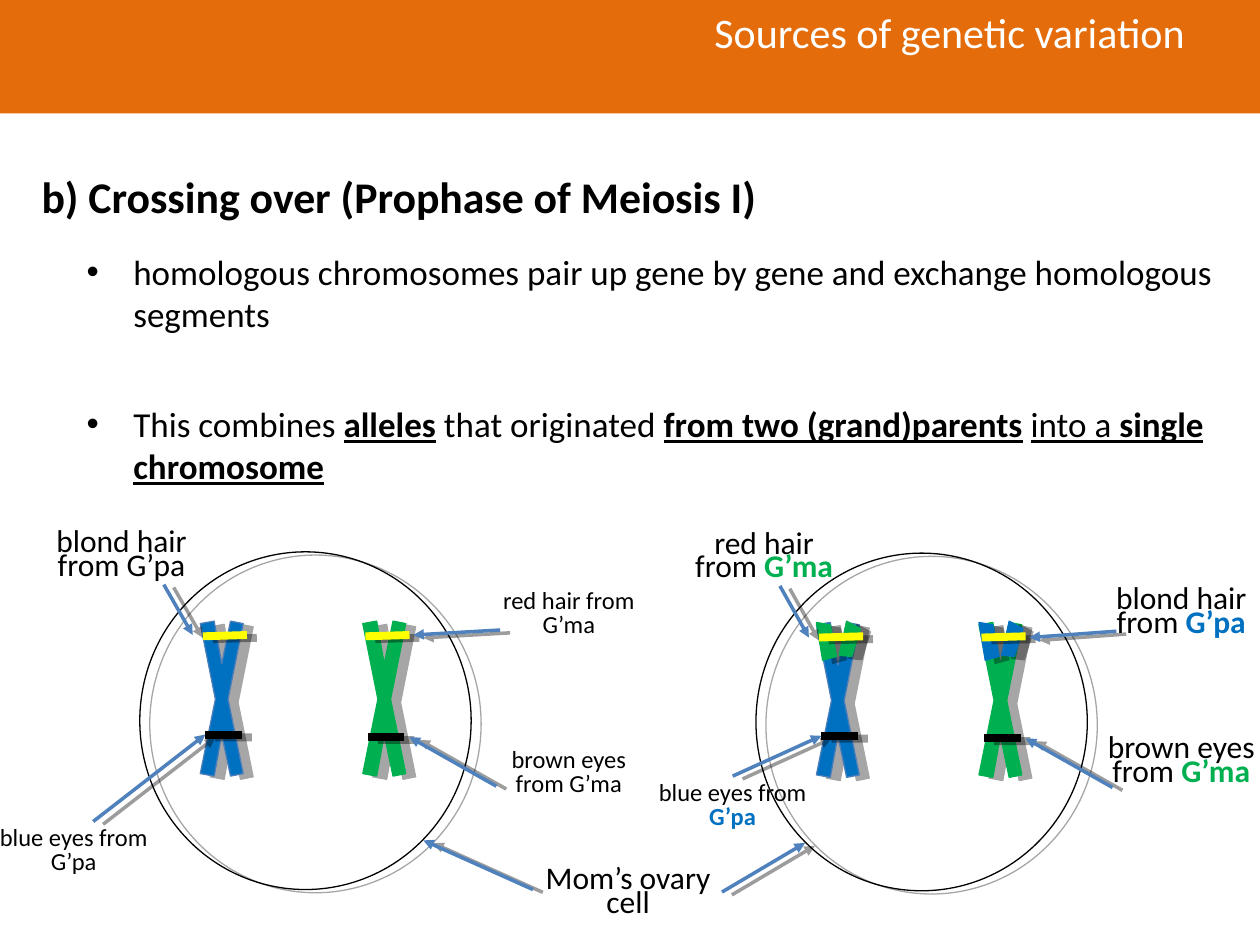
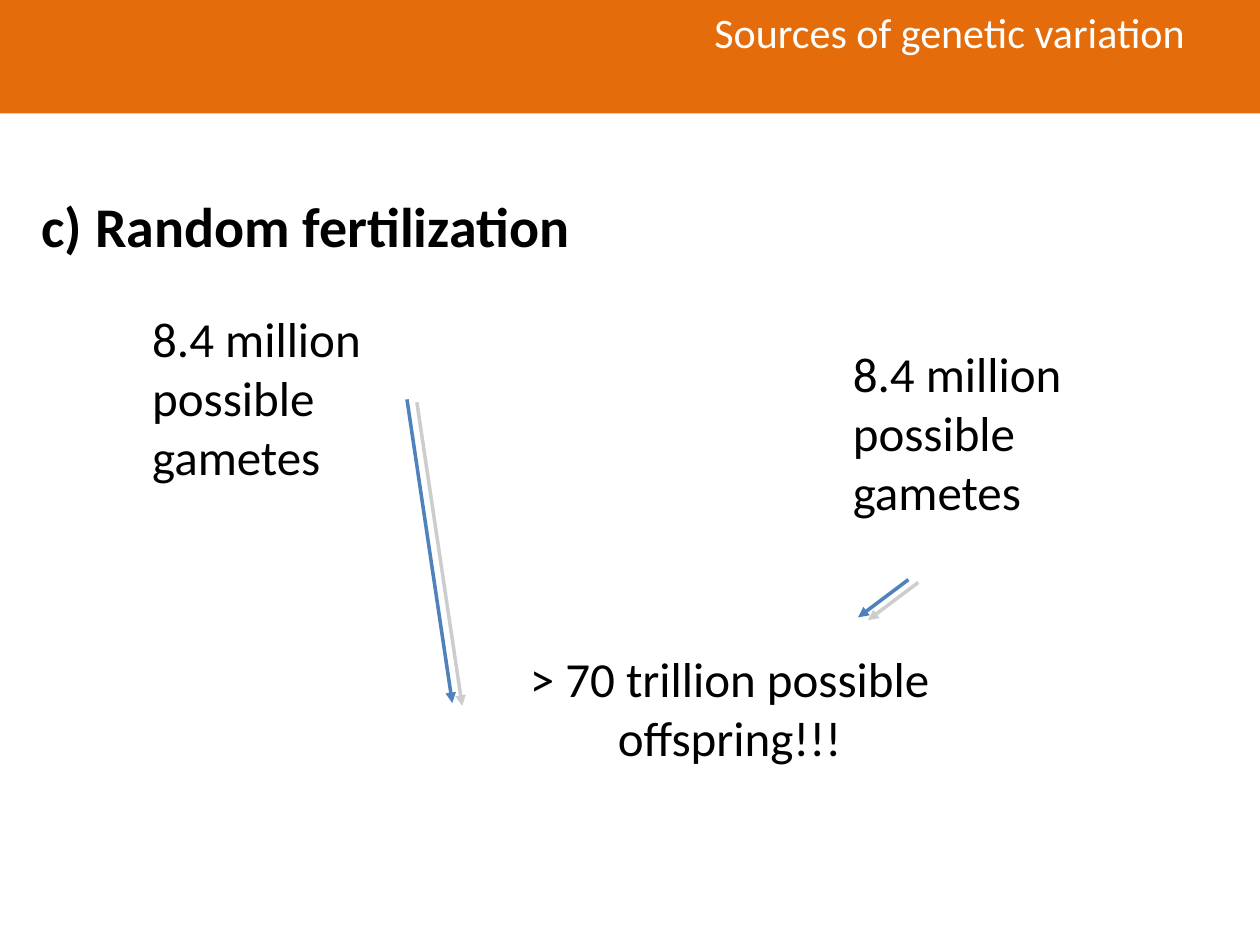
"""Build two slides on sources of genetic variation: crossing over and random fertilization."""
from dataclasses import dataclass

from lxml import etree
from pptx import Presentation
from pptx.dml.color import RGBColor
from pptx.enum.shapes import MSO_CONNECTOR, MSO_SHAPE
from pptx.enum.text import MSO_ANCHOR, MSO_AUTO_SIZE, PP_ALIGN
from pptx.oxml.ns import qn
from pptx.util import Inches, Pt


@dataclass(frozen=True)
class Theme:
    font: str = "Calibri"
    band: str = "E46C0A"
    white: str = "FFFFFF"
    black: str = "000000"
    grandpa: str = "0070C0"
    grandpa_edge: str = "4A7EBB"
    grandma: str = "00B050"
    hair: str = "FFFF00"
    arrow: str = "4F81BD"
    pale_shadow: str = "808080"
    band_size: int = 24
    body_size: int = 20
    gamete_size: int = 28
    label_size: int = 18
    small_label_size: int = 14
    label_pitch: float = 13.6


THEME = Theme()


def outline(shape, color, width, shadow=THEME.black, alpha=38, distance=5.9, angle=16, arrow=False):
    """Give a shape or connector its line, offset shadow and optional arrowhead."""
    shape.line.color.rgb = RGBColor.from_string(color)
    shape.line.width = Pt(width)
    properties = shape.element.spPr
    if arrow:
        etree.SubElement(properties.find(qn("a:ln")), qn("a:tailEnd"), type="triangle")
    effects = etree.SubElement(properties, qn("a:effectLst"))
    cast = etree.SubElement(effects, qn("a:outerShdw"), dist=str(Pt(distance)),
                            dir=str(angle * 60000), algn="ctr", rotWithShape="0")
    tint = etree.SubElement(cast, qn("a:srgbClr"), val=shadow)
    etree.SubElement(tint, qn("a:alpha"), val=str(alpha * 1000))


def write(slide, box, runs, size, align=PP_ALIGN.LEFT, pitch=None):
    """Add a wrapped text box holding one paragraph of (text, color, bold) runs."""
    holder = slide.shapes.add_textbox(*map(Inches, box))
    holder.text_frame.word_wrap = True
    paragraph = holder.text_frame.paragraphs[0]
    paragraph.alignment = align
    paragraph.font.name = THEME.font
    paragraph.font.size = Pt(size)
    if pitch:
        paragraph.line_spacing = Pt(pitch)
    for text, color, bold in runs:
        run = paragraph.add_run()
        run.text = text
        run.font.color.rgb = RGBColor.from_string(color)
        run.font.bold = bold
    return holder


prs = Presentation()
prs.slide_width, prs.slide_height = Inches(10), Inches(7.5)

slides = []
for heading, size, top, height in (
    ("b) Crossing over (Prophase of Meiosis I)", 25, 1.28, 0.55),
    ("c) Random fertilization", 32, 1.47, 0.63),
):
    slide = prs.slides.add_slide(prs.slide_layouts[5])
    title = slide.shapes.title
    title.left, title.top, title.width, title.height = map(Inches, (0.23, top, 9.33, height))
    title.text_frame.text = heading
    title.text_frame.auto_size = MSO_AUTO_SIZE.NONE
    title.text_frame.vertical_anchor = MSO_ANCHOR.MIDDLE
    band = slide.shapes.add_shape(MSO_SHAPE.RECTANGLE, 0, 0, prs.slide_width, Inches(0.9))
    band.shadow.inherit = False
    band.fill.solid()
    band.fill.fore_color.rgb = RGBColor.from_string(THEME.band)
    band.line.fill.background()
    band.text_frame.text = "Sources of genetic variation"
    band.text_frame.margin_left = Inches(5.67)
    band.text_frame.vertical_anchor = MSO_ANCHOR.TOP
    for part, part_size, color, bold in ((title, size, THEME.black, True),
                                         (band, THEME.band_size, THEME.white, False)):
        paragraph = part.text_frame.paragraphs[0]
        paragraph.alignment = PP_ALIGN.LEFT
        paragraph.font.name = THEME.font
        paragraph.font.size = Pt(part_size)
        paragraph.font.bold = bold
        paragraph.font.color.rgb = RGBColor.from_string(color)
    slides.append(slide)

crossing, fertilization = slides

points = crossing.shapes.add_textbox(*map(Inches, (0.59, 1.94, 9.33, 3.53))).text_frame
points.word_wrap = True
for index, runs in enumerate((
    [("homologous chromosomes pair up gene by gene and exchange homologous segments", False, False)],
    [("This combines ", False, False), ("alleles", True, True), (" that originated ", False, False),
     ("from two (grand)parents", True, True), (" ", False, False), ("into a ", False, True),
     ("single chromosome", True, True)],
)):
    paragraph = points.add_paragraph() if index else points.paragraphs[0]
    paragraph.space_before = Pt(39 * index)
    paragraph.font.name = THEME.font
    paragraph.font.size = Pt(THEME.body_size)
    paragraph.font.color.rgb = RGBColor.from_string(THEME.black)
    indents = paragraph._p.get_or_add_pPr()
    indents.set("marL", str(Inches(0.37)))
    indents.set("indent", str(-Inches(0.37)))
    bullet_font = etree.Element(qn("a:buFont"), typeface="Arial")
    bullet = etree.Element(qn("a:buChar"), char="•")
    indents.find(qn("a:defRPr")).addprevious(bullet_font)
    bullet_font.addnext(bullet)
    for text, bold, underline in runs:
        run = paragraph.add_run()
        run.text = text
        run.font.bold = bold
        run.font.underline = underline

CHROMOSOME = [(-0.17, 0.57), (-0.06, 0.55), (0, 0.89), (0.07, 0.55), (0.17, 0.57), (0.05, 1.17),
              (0.17, 1.76), (0.07, 1.78), (0, 1.45), (-0.06, 1.78), (-0.17, 1.76), (-0.05, 1.17)]
SWAPPED_TIPS = [[(-0.17, 0.55), (-0.06, 0.57), (-0.01, 0.82), (-0.12, 0.85)],
                [(0.07, 0.54), (0.18, 0.6), (0.11, 0.82), (0.01, 0.81)]]
grandpa = (THEME.grandpa, THEME.grandpa_edge)
grandma = (THEME.grandma, THEME.grandma)

for left, top, crossed in ((1.11, 4.38, False), (6, 4.39, True)):
    for offset, own, partner, eye_drop in ((0.65, grandpa, grandma, 1.45),
                                           (1.94, grandma, grandpa, 1.47)):
        center = left + offset
        pieces = [(CHROMOSOME, own)]
        if crossed:
            pieces += [(tip, (partner[0], partner[0])) for tip in SWAPPED_TIPS]
        for corners, (fill, edge) in pieces:
            corners = [(Inches(center + x), Inches(top + y)) for x, y in corners]
            builder = crossing.shapes.build_freeform(*corners[0])
            builder.add_line_segments(corners[1:], close=True)
            segment = builder.convert_to_shape()
            segment.fill.solid()
            segment.fill.fore_color.rgb = RGBColor.from_string(fill)
            outline(segment, edge, 0.75, alpha=35, distance=6, angle=18)
        for color, start, end, start_drop, end_drop in (
            (THEME.hair, -0.15, 0.2, 0.67, 0.66),
            (THEME.black, -0.13, 0.16, eye_drop, eye_drop),
        ):
            gene = crossing.shapes.add_connector(
                MSO_CONNECTOR.STRAIGHT, Inches(center + start), Inches(top + start_drop),
                Inches(center + end), Inches(top + end_drop))
            outline(gene, color, 4.5)
    cell = crossing.shapes.add_shape(MSO_SHAPE.OVAL, *map(Inches, (left, top, 2.63, 2.68)))
    cell.fill.background()
    outline(cell, THEME.black, 0.75, alpha=35, distance=6, angle=18)

big, small = THEME.label_size, THEME.small_label_size
for trait, parent, color, size, left, top, height, arrows in (
    ("blond hair from ", "G’pa", None, big, 0.21, 4.2, 0.48, [(1.3, 4.64, 1.53, 5.04)]),
    ("blue eyes from ", "G’pa", None, small, -0.17, 6.52, 0.48, [(0.74, 6.52, 1.63, 5.83)]),
    ("red hair from ", "G’ma", None, small, 3.76, 4.64, 0.48, [(3.97, 5, 3.28, 5.04)]),
    ("brown eyes from ", "G’ma", None, small, 3.76, 5.9, 0.48, [(3.94, 6.24, 3.25, 5.85)]),
    ("Mom’s ovary ", "cell", None, big, 4.23, 6.87, 0.48,
     [(4.23, 7.06, 3.36, 6.67), (5.73, 7.08, 6.39, 6.69)]),
    ("red hair from ", "G’ma", THEME.grandma, big, 5.31, 4.21, 0.68, [(6.19, 4.65, 6.42, 5.06)]),
    ("blue eyes from ", "G’pa", THEME.grandpa, small, 5.06, 6.16, 0.48, [(5.81, 6.16, 6.52, 5.84)]),
    ("blond hair from ", "G’pa", THEME.grandpa, big, 8.62, 4.65, 0.51, [(8.86, 5.01, 8.17, 5.06)]),
    ("brown eyes from ", "G’ma", THEME.grandma, big, 8.62, 5.83, 0.68, [(8.83, 6.25, 8.14, 5.86)]),
):
    runs = [(trait, THEME.black, False), (parent, color, True)] if color else [
        (trait + parent, THEME.black, False)]
    label = write(crossing, (left, top, 1.51, height), runs, size, PP_ALIGN.CENTER, THEME.label_pitch)
    for ends in arrows:
        pointer = crossing.shapes.add_connector(MSO_CONNECTOR.STRAIGHT, *map(Inches, ends))
        if ends[1] == top and abs(ends[0] - left - 1.51 / 2) < 0.02:
            pointer.begin_connect(label, 0)
        outline(pointer, THEME.arrow, 2, arrow=True)

for text, box, align in (
    ("8.4 million possible gametes", (6.67, 2.68, 2.89, 1.5), PP_ALIGN.LEFT),
    ("8.4 million possible gametes", (1.11, 2.4, 2.89, 1.5), PP_ALIGN.LEFT),
    ("> 70 trillion possible offspring!!!", (3.88, 5.1, 3.82, 1.5), PP_ALIGN.CENTER),
):
    write(fertilization, box, [(text, THEME.black, False)], THEME.gamete_size, align)

for ends in ((3.23, 3.17, 3.59, 5.58), (7.21, 4.6, 6.81, 4.9)):
    union = fertilization.shapes.add_connector(MSO_CONNECTOR.STRAIGHT, *map(Inches, ends))
    outline(union, THEME.arrow, 2, shadow=THEME.pale_shadow, arrow=True)

prs.save("out.pptx")
